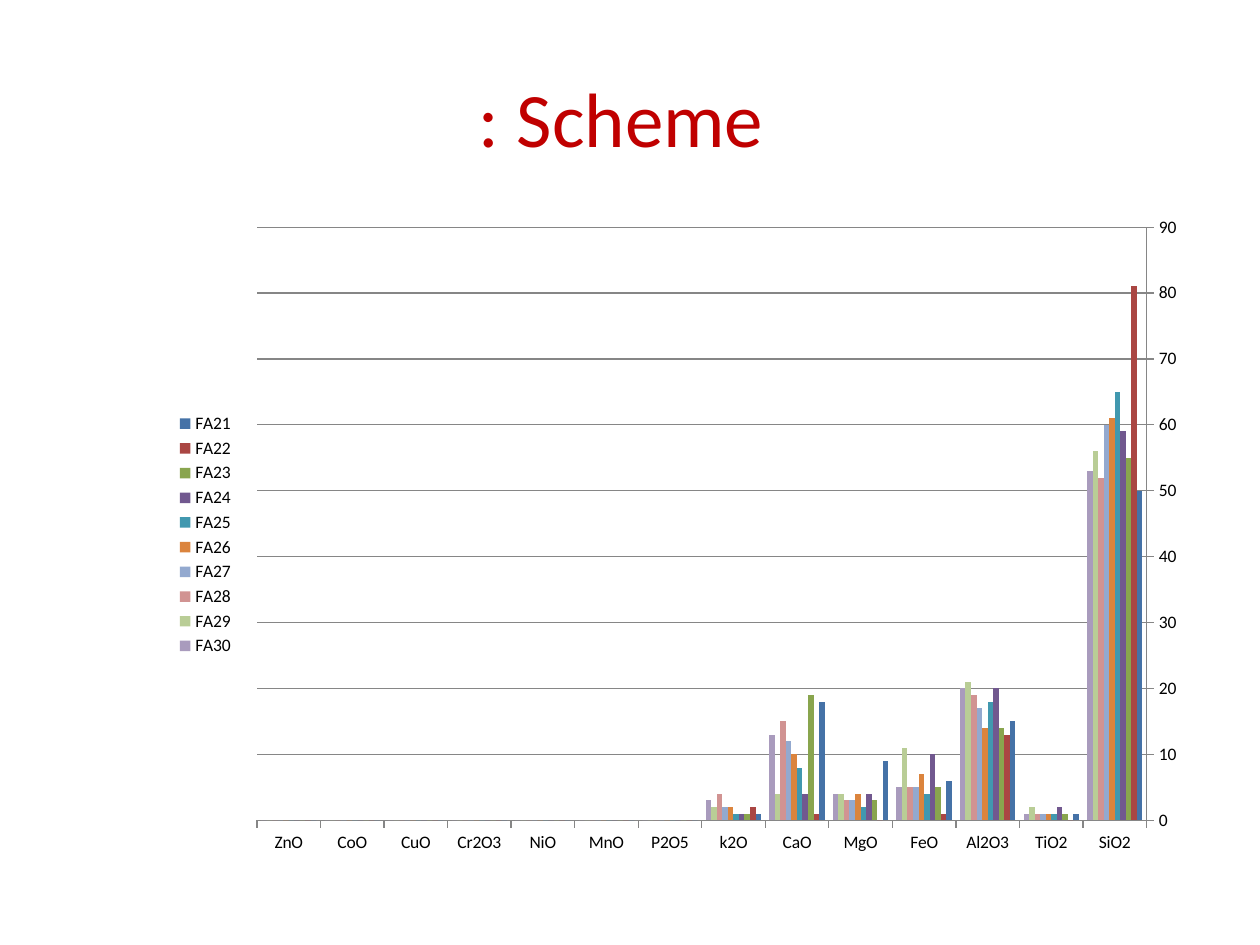
from pptx import Presentation
from pptx.chart.data import CategoryChartData
from pptx.dml.color import RGBColor
from pptx.enum.chart import XL_CHART_TYPE, XL_LEGEND_POSITION, XL_TICK_MARK
from pptx.enum.text import MSO_ANCHOR, PP_ALIGN
from pptx.util import Inches, Pt


def color(hex_code):
    return RGBColor.from_string(hex_code)


FONT = "Calibri"
AXIS_GRAY = "868686"
OXIDES = ["SiO2", "TiO2", "Al2O3", "FeO", "MgO", "CaO", "k2O",
          "P2O5", "MnO", "NiO", "Cr2O3", "CuO", "CoO", "ZnO"]
# Sample name, colour, and the shares of the first seven oxides; the rest are 0.
SAMPLES = [
    ("FA21", "4572A7", [50, 1, 15, 6, 9, 18, 1]),
    ("FA22", "AA4643", [81, 0, 13, 1, 0, 1, 2]),
    ("FA23", "89A54E", [55, 1, 14, 5, 3, 19, 1]),
    ("FA24", "71588F", [59, 2, 20, 10, 4, 4, 1]),
    ("FA25", "4198AF", [65, 1, 18, 4, 2, 8, 1]),
    ("FA26", "DB843D", [61, 1, 14, 7, 4, 10, 2]),
    ("FA27", "93A9CF", [60, 1, 17, 5, 3, 12, 2]),
    ("FA28", "D19392", [52, 1, 19, 5, 3, 15, 4]),
    ("FA29", "B9CD96", [56, 2, 21, 11, 4, 4, 2]),
    ("FA30", "A99BBD", [53, 1, 20, 5, 4, 13, 3]),
]

presentation = Presentation()
presentation.slide_width = Inches(10)
presentation.slide_height = Inches(7.5)
width, height = presentation.slide_width, presentation.slide_height
slide = presentation.slides.add_slide(presentation.slide_layouts[5])

# Title
title = slide.shapes.title
title.left, title.top = int(width * 0.05), int(height * 0.04)
title.width, title.height = int(width * 0.9), Inches(1.25)
title.text_frame.vertical_anchor = MSO_ANCHOR.MIDDLE
paragraph = title.text_frame.paragraphs[0]
paragraph.alignment = PP_ALIGN.CENTER
run = paragraph.add_run()
run.text = ": Scheme "
run.font.name = FONT
run.font.size = Pt(44)
run.font.color.rgb = color("C00000")

# Chart
chart_data = CategoryChartData(number_format="General")
chart_data.categories = OXIDES
for name, _, shares in SAMPLES:
    chart_data.add_series(name, shares + [0] * (len(OXIDES) - len(shares)))
chart = slide.shapes.add_chart(
    XL_CHART_TYPE.COLUMN_CLUSTERED, int(width * 0.13), Inches(1.62),
    int(width * 0.82), int(height * 0.7), chart_data).chart
chart.has_title = False
chart.font.name = FONT
chart.font.size = Pt(10)
chart.font.color.rgb = color("000000")

chart.has_legend = True
chart.legend.position = XL_LEGEND_POSITION.LEFT
chart.legend.include_in_layout = False

plot = chart.plots[0]
plot.gap_width = 150
plot.overlap = 0
plot.vary_by_categories = False
for series, (_, fill, _) in zip(plot.series, SAMPLES):
    series.invert_if_negative = False
    series.format.fill.solid()
    series.format.fill.fore_color.rgb = color(fill)

# Axes: the categories run from right to left
chart.category_axis.reverse_order = True
value_axis = chart.value_axis
value_axis.minimum_scale, value_axis.maximum_scale = 0, 90
value_axis.major_unit = 10
value_axis.has_major_gridlines = True
for axis in (chart.category_axis, value_axis):
    axis.major_tick_mark = XL_TICK_MARK.OUTSIDE
    axis.minor_tick_mark = XL_TICK_MARK.NONE
for lines in (chart.category_axis, value_axis, value_axis.major_gridlines):
    lines.format.line.color.rgb = color(AXIS_GRAY)
    lines.format.line.width = Pt(0.75)

presentation.save("out.pptx")
